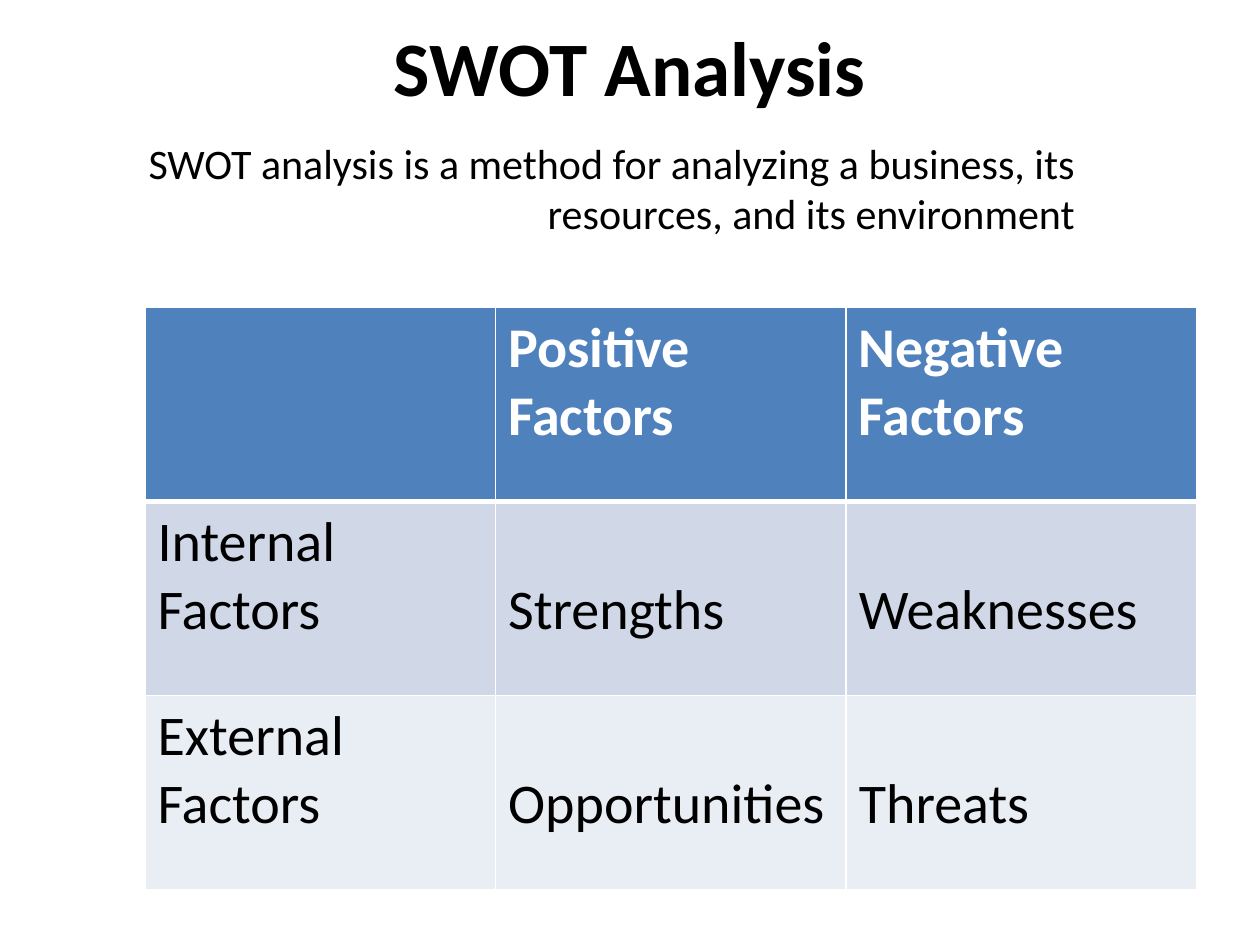
"""Build the SWOT analysis slide."""
from dataclasses import dataclass

from lxml.etree import SubElement
from pptx import Presentation
from pptx.dml.color import RGBColor
from pptx.enum.text import MSO_ANCHOR, PP_ALIGN
from pptx.oxml.ns import qn
from pptx.util import Inches, Pt


@dataclass(frozen=True)
class Theme:
    """Colours, font and type sizes of the slide."""
    font: str = "Calibri"
    text: str = "000000"
    light: str = "FFFFFF"
    header: str = "4F81BD"
    bands: tuple = ("D0D8E8", "E9EDF4")
    title_size: int = 44
    intro_size: int = 24
    cell_size: int = 32


THEME = Theme()
MATRIX = (
    ("", "Positive Factors", "Negative Factors"),
    ("Internal Factors", "Strengths", "Weaknesses"),
    ("External Factors", "Opportunities", "Threats"),
)


def add_text(frame, wording, size, color=THEME.text, bold=False, align=PP_ALIGN.LEFT):
    """Write one styled run into the first paragraph of a frame."""
    paragraph = frame.paragraphs[0]
    paragraph.alignment = align
    run = paragraph.add_run()
    run.text = wording
    run.font.name = THEME.font
    run.font.size = Pt(size)
    run.font.bold = bold
    run.font.color.rgb = RGBColor.from_string(color)


def add_title(slide, wording):
    """Place and format the title placeholder."""
    title = slide.shapes.title
    title.left, title.top = Inches(0.5), Inches(0)
    title.width, title.height = Inches(9), Inches(1.04)
    title.text_frame.vertical_anchor = MSO_ANCHOR.MIDDLE
    add_text(title.text_frame, wording, THEME.title_size, bold=True, align=PP_ALIGN.CENTER)


def add_intro(slide, wording):
    """Add the right-aligned definition under the title."""
    intro = slide.shapes.add_textbox(Inches(0.5), Inches(1.04), Inches(8.13), Inches(0.91))
    intro.text_frame.word_wrap = True
    add_text(intro.text_frame, wording, THEME.intro_size, align=PP_ALIGN.RIGHT)


def set_borders(cell, top, bottom):
    """Draw light borders around a cell, with the given top and bottom points."""
    properties = cell._tc.get_or_add_tcPr()
    for side, points in (("L", 1), ("R", 1), ("T", top), ("B", bottom)):
        line = SubElement(properties, qn(f"a:ln{side}"), w=str(Pt(points)))
        fill = SubElement(line, qn("a:solidFill"))
        SubElement(fill, qn("a:srgbClr"), val=THEME.light)


def format_cell(cell, wording, row, column):
    """Style a cell as header, row label or quadrant according to its place."""
    is_header = row == 0
    set_borders(cell, top=3 if row == 1 else 1, bottom=3 if is_header else 1)
    cell.fill.solid()
    fill = THEME.header if is_header else THEME.bands[row - 1]
    cell.fill.fore_color.rgb = RGBColor.from_string(fill)
    if row and column:
        cell.margin_top = Inches(0.59)
    if wording:
        color = THEME.light if is_header else THEME.text
        add_text(cell.text_frame, wording, THEME.cell_size, color, bold=is_header)


def add_matrix(slide, matrix):
    """Add the table of internal and external factors."""
    table = slide.shapes.add_table(
        len(matrix), len(matrix[0]), Inches(1.15), Inches(2.44), Inches(8.35), Inches(4.62)
    ).table
    for row, wordings in enumerate(matrix):
        for column, wording in enumerate(wordings):
            format_cell(table.cell(row, column), wording, row, column)


def main():
    """Build and save the slide."""
    presentation = Presentation()
    presentation.slide_width, presentation.slide_height = Inches(10), Inches(7.5)
    slide = presentation.slides.add_slide(presentation.slide_layouts[5])
    add_title(slide, "SWOT Analysis")
    add_matrix(slide, MATRIX)
    add_intro(
        slide,
        "SWOT analysis is a method for analyzing a business, "
        "its resources, and its environment",
    )
    presentation.save("out.pptx")


if __name__ == "__main__":
    main()
